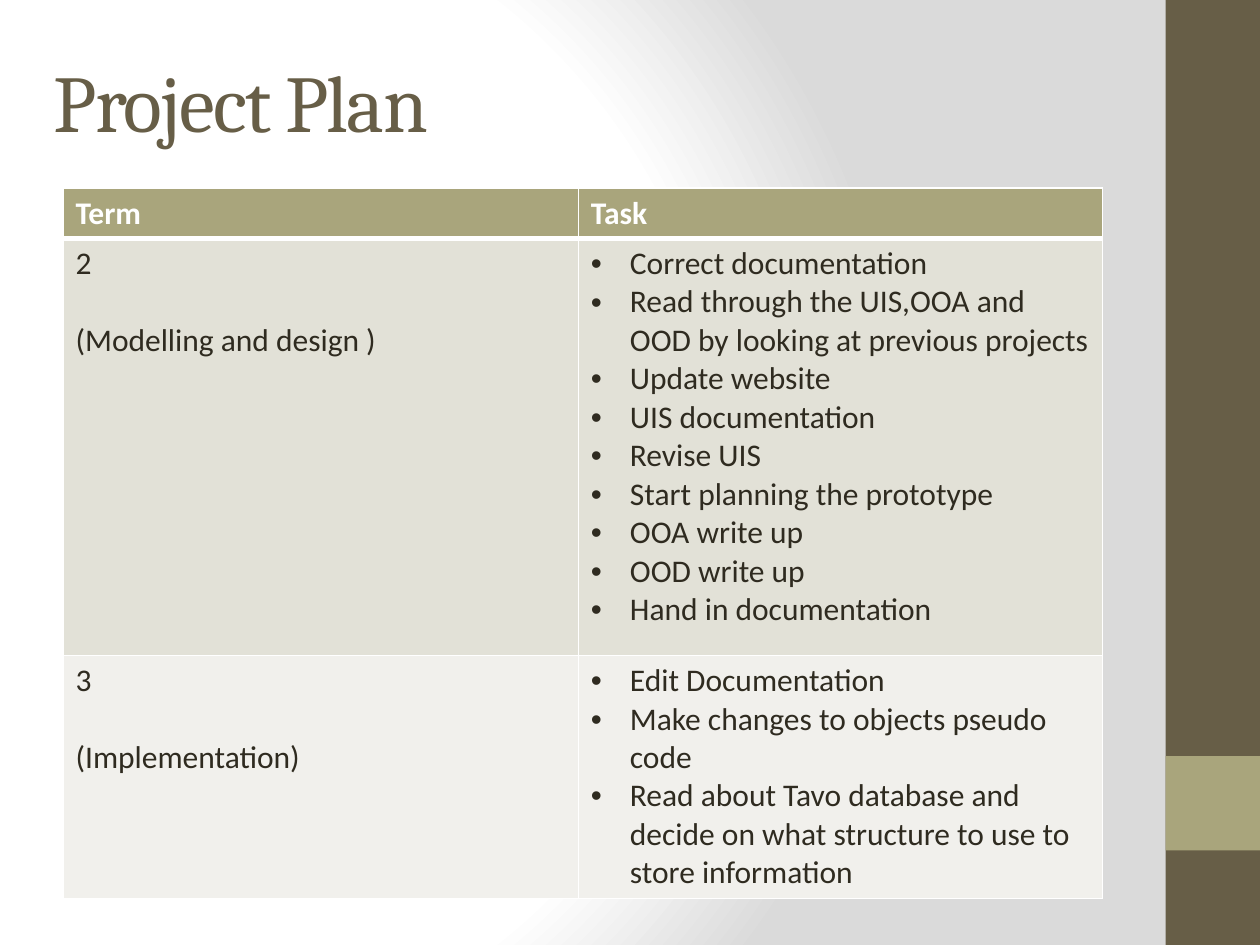
from lxml import etree
from pptx import Presentation
from pptx.dml.color import RGBColor
from pptx.enum import shapes, text
from pptx.oxml import ns
from pptx.util import Inches, Pt

COLORS = {
    "white": "FFFFFF", "gray": "DADADA", "brown": "675E47", "olive": "A9A57C",
    "ink": "2F2B20", "band_dark": "E2E1D7", "band_light": "F1F0EC",
}
TERMS = [
    ("2", "(Modelling and design )", "band_dark", [
        "Correct documentation",
        "Read through the UIS,OOA and OOD by looking at previous projects",
        "Update website",
        "UIS documentation",
        "Revise UIS",
        "Start planning the prototype",
        "OOA write up",
        "OOD write up",
        "Hand in documentation",
    ]),
    ("3", "(Implementation)", "band_light", [
        "Edit Documentation",
        "Make changes to objects pseudo code",
        "Read about Tavo database and decide on what structure to use to store information",
    ]),
]


def add_run(paragraph, words, size, font, color, bold=False):
    run = paragraph.add_run()
    run.text = words
    run.font.size, run.font.name, run.font.bold = Pt(size), font, bold
    run.font.color.rgb = RGBColor.from_string(COLORS[color])
    return run


def style_cell(cell, fill, top=1, bottom=1):
    """Draw white borders (widths in points) and fill the cell."""
    props = cell._tc.get_or_add_tcPr()
    for side, width in (("L", 1), ("R", 1), ("T", top), ("B", bottom)):
        line = etree.SubElement(props, ns.qn(f"a:ln{side}"), w=str(Pt(width)))
        solid = etree.SubElement(line, ns.qn("a:solidFill"))
        etree.SubElement(solid, ns.qn("a:srgbClr"), val=COLORS["white"])
    cell.fill.solid()
    cell.fill.fore_color.rgb = RGBColor.from_string(COLORS[fill])


prs = Presentation()
prs.slide_width, prs.slide_height = Inches(10), Inches(7.5)
slide = prs.slides.add_slide(prs.slide_layouts[6])

# Background: circular gradient
slide.background.fill.gradient()
gradient = slide._element.find(".//" + ns.qn("a:gradFill"))
for child in list(gradient):
    gradient.remove(child)
stops = etree.SubElement(gradient, ns.qn("a:gsLst"))
for percent, color in ((0, "white"), (75, "white"), (100, "gray")):
    stop = etree.SubElement(stops, ns.qn("a:gs"), pos=str(percent * 1000))
    etree.SubElement(stop, ns.qn("a:srgbClr"), val=COLORS[color])
circle = etree.SubElement(gradient, ns.qn("a:path"), path="circle")
etree.SubElement(circle, ns.qn("a:fillToRect"), l="20000", t="50000", r="100000", b="50000")

# Side bar with accent square
for top, height, color in ((0, 7.5, "brown"), (6, 0.75, "olive")):
    bar = slide.shapes.add_shape(shapes.MSO_SHAPE.RECTANGLE, Inches(9.25), Inches(top),
                                 Inches(0.75), Inches(height))
    bar.shadow.inherit = False
    bar.fill.solid()
    bar.fill.fore_color.rgb = RGBColor.from_string(COLORS[color])
    bar.line.fill.background()

# Title
title = slide.shapes.add_textbox(Inches(0.33), Inches(0.17), Inches(8.33), Inches(1.25))
title.text_frame.word_wrap = True
title.text_frame.vertical_anchor = text.MSO_ANCHOR.MIDDLE
title_run = add_run(title.text_frame.paragraphs[0], "Project Plan", 46, "Cambria", "brown")
title_run.font._element.set("spc", "-100")

# Plan table
plan = slide.shapes.add_table(3, 2, Inches(0.5), Inches(1.49), Inches(8.25), Inches(5.63)).table
for column, width in zip(plan.columns, (4.09, 4.16)):
    column.width = Inches(width)
for row, height in zip(plan.rows, (0.39, 3.31, 1.93)):
    row.height = Inches(height)

for col, heading in enumerate(("Term", "Task")):
    cell = plan.cell(0, col)
    style_cell(cell, "olive", bottom=3)
    add_run(cell.text_frame.paragraphs[0], heading, 18, "Calibri", "white", bold=True)

for row, (number, phase, band, tasks) in enumerate(TERMS, start=1):
    term_cell, task_cell = plan.cell(row, 0), plan.cell(row, 1)
    for cell in (term_cell, task_cell):
        style_cell(cell, band, top=3 if row == 1 else 1)

    term_frame = term_cell.text_frame
    add_run(term_frame.paragraphs[0], number, 18, "Calibri", "ink")
    phase_line = term_frame.add_paragraph()
    phase_line.space_before = Pt(22)
    add_run(phase_line, phase, 18, "Calibri", "ink")

    task_frame = task_cell.text_frame
    for index, task in enumerate(tasks):
        item = task_frame.add_paragraph() if index else task_frame.paragraphs[0]
        props = item._p.get_or_add_pPr()
        props.set("marL", str(Inches(0.31)))
        props.set("indent", str(-Inches(0.31)))
        etree.SubElement(props, ns.qn("a:buFont"), typeface="Arial")
        etree.SubElement(props, ns.qn("a:buChar"), char="•")
        add_run(item, task, 18, "Calibri", "ink")

prs.save("out.pptx")
